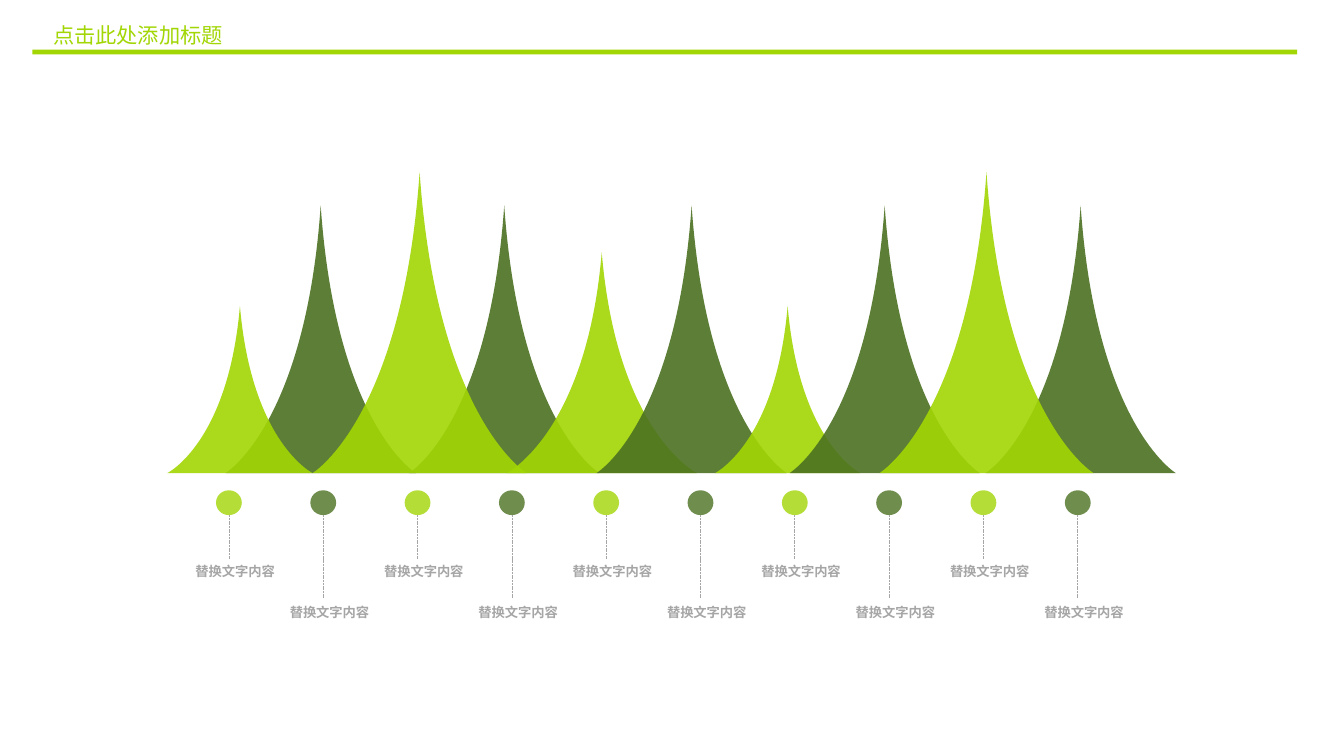
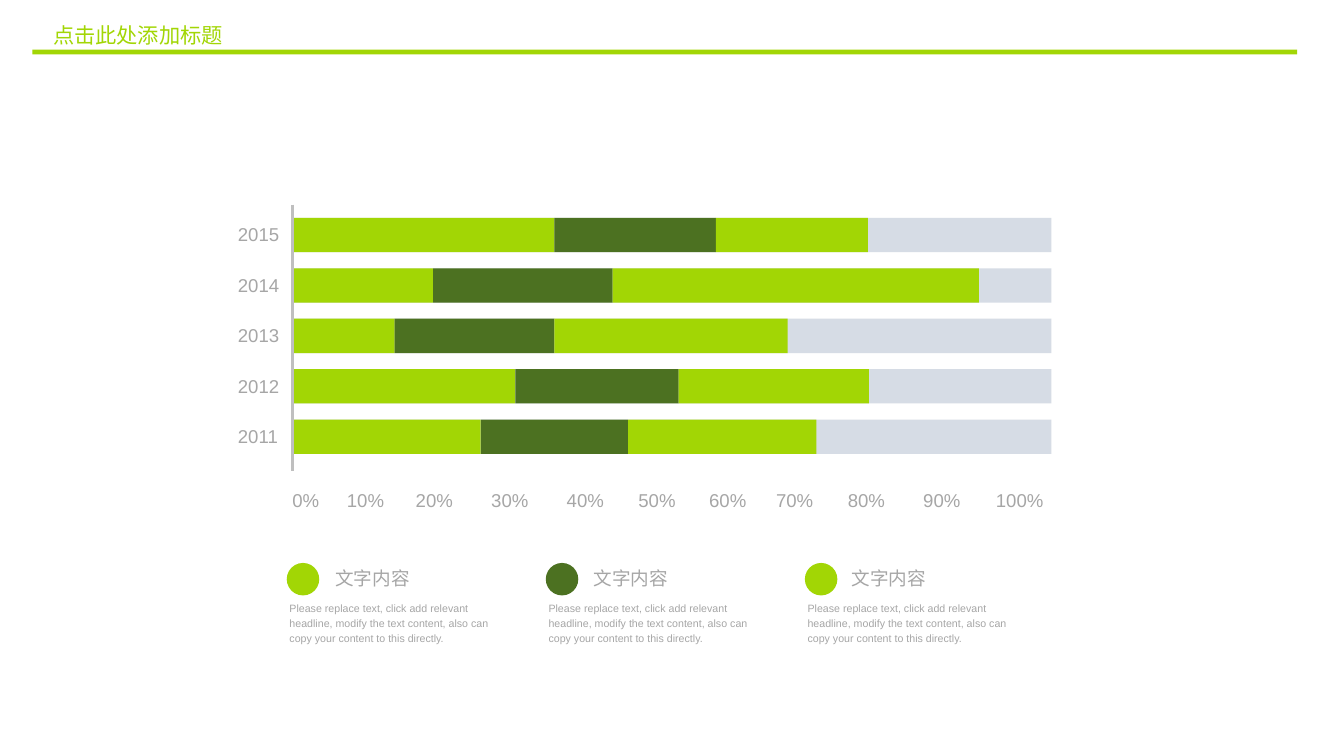
from dataclasses import dataclass

import lxml.etree
import pptx
import pptx.dml.color
import pptx.enum.dml
import pptx.enum.shapes
import pptx.enum.text
import pptx.oxml.ns
import pptx.slide
import pptx.util

qn = pptx.oxml.ns.qn
Inches = pptx.util.Inches
Shape = pptx.enum.shapes.MSO_SHAPE
Align = pptx.enum.text.PP_ALIGN


@dataclass(frozen=True)
class Theme:
    lime: str = "A2D605"
    forest: str = "4C7121"
    track: str = "D6DCE5"
    grey: str = "A6A6A6"
    spine: str = "BFBFBF"
    body_font: str = "Arial"
    title_font: str = "Noto Sans CJK SC"
    title_size: int = 16
    heading_size: int = 14
    label_size: int = 10
    note_size: int = 8


@dataclass(frozen=True)
class Hill:
    left: float
    width: float
    height: float
    color: str


@dataclass(frozen=True)
class YearRow:
    year: str
    widths: tuple


@dataclass(frozen=True)
class Box:
    left: float
    top: float
    width: float
    height: float

    def emu(self) -> tuple:
        return tuple(Inches(v) for v in (self.left, self.top, self.width, self.height))


THEME = Theme()
WIDTH, HEIGHT = 14.06, 7.91
TITLE = "点击此处添加标题"

# Hills, back to front, standing on one base line
BASE = 4.95
TALL, MIDDLE, SMALL, LOW = (2.24, 3.15), (1.99, 2.8), (1.99, 2.31), (1.52, 1.75)
HILLS = [
    Hill(2.36, *MIDDLE, THEME.forest),
    Hill(4.28, *MIDDLE, THEME.forest),
    Hill(1.75, *LOW, THEME.lime),
    Hill(3.27, *TALL, THEME.lime),
    Hill(5.30, *SMALL, THEME.lime),
    Hill(6.24, *MIDDLE, THEME.forest),
    Hill(7.48, *LOW, THEME.lime),
    Hill(8.26, *MIDDLE, THEME.forest),
    Hill(10.31, *MIDDLE, THEME.forest),
    Hill(9.20, *TALL, THEME.lime),
]

# Markers: ten equal columns, labels on two alternating rows
MARKERS = 10
MARKER_FIRST, MARKER_LAST = 2.26, 11.14
MARKER_TOP = 5.13
LABEL_ROWS = (5.86, 6.29)
LINE_ENDS = (5.85, 6.26)
LABEL = "替换文字内容"

# Year rows: segment widths, laid end to end over a full-width track
ROWS = [
    YearRow("2015", (2.74, 1.69, 1.59)),
    YearRow("2014", (1.47, 1.88, 3.83)),
    YearRow("2013", (1.07, 1.67, 2.44)),
    YearRow("2012", (2.33, 1.71, 1.99)),
    YearRow("2011", (1.97, 1.54, 1.97)),
]
SEGMENT_COLORS = (THEME.lime, THEME.forest, THEME.lime)
BAR_LEFT, BAR_TOP, BAR_WIDTH, BAR_HEIGHT = 3.06, 2.28, 7.94, 0.36
ROW_STEP = (4.39 - BAR_TOP) / (len(ROWS) - 1)
TICK_TOP = 5.02
TICK_LEFTS = (2.96, 3.53, 4.25, 5.04, 5.83, 6.58, 7.32, 8.02, 8.77, 9.56, 10.32)
TICK_WIDTHS = {2: 0.49, 3: 0.59, 4: 0.70}

# Legend columns
DOT_LEFT, HEADING_LEFT, NOTE_LEFT = 3.0, 3.41, 2.93
LEGEND_STEP, HEADING_STEP = 2.71, 2.7
HEADING = "文字内容"
NOTE = ("Please replace text, click add relevant headline, modify the text "
        "content, also can copy your content to this directly.")


def rgb(color: str) -> pptx.dml.color.RGBColor:
    return pptx.dml.color.RGBColor.from_string(color)


def paint(shape, color: str, opacity: int = 100) -> None:
    shape.shadow.inherit = False
    shape.line.fill.background()
    shape.fill.solid()
    shape.fill.fore_color.rgb = rgb(color)
    if opacity < 100:
        tint = shape.element.spPr.find(qn("a:solidFill"))[0]
        lxml.etree.SubElement(tint, qn("a:alpha"), val=str(opacity * 1000))


def add_block(page: pptx.slide.Slide, kind, box: Box, color: str, opacity: int = 100):
    shape = page.shapes.add_shape(kind, *box.emu())
    paint(shape, color, opacity)
    return shape


def add_text(page: pptx.slide.Slide, box: Box, text: str, size: int, *,
             color: str = THEME.grey, font: str = THEME.body_font, bold: bool = False,
             align=None, wrap: bool = False, spacing: float = 1.2,
             inset: bool = True) -> None:
    frame = page.shapes.add_textbox(*box.emu()).text_frame
    frame.word_wrap = wrap
    if not inset:
        frame.margin_left = frame.margin_right = 0
        frame.margin_top = frame.margin_bottom = 0
    para = frame.paragraphs[0]
    para.text = text
    para.alignment = align
    para.line_spacing = spacing
    para.font.name = font
    para.font.size = pptx.util.Pt(size)
    para.font.bold = bold
    para.font.color.rgb = rgb(color)


def add_line(page: pptx.slide.Slide, x: float, top: float, bottom: float,
             color: str, weight: float):
    line = page.shapes.add_connector(pptx.enum.shapes.MSO_CONNECTOR.STRAIGHT,
                                     Inches(x), Inches(top), Inches(x), Inches(bottom))
    line.line.color.rgb = rgb(color)
    line.line.width = pptx.util.Pt(weight)
    lxml.etree.SubElement(line.element.spPr, qn("a:effectLst"))
    return line


def add_title(page: pptx.slide.Slide) -> None:
    add_text(page, Box(0.46, 0.18, 2.07, 0.39), TITLE, THEME.title_size,
             color=THEME.lime, font=THEME.title_font, wrap=True, spacing=1.0)


def add_band(page: pptx.slide.Slide) -> None:
    """Move the title band to the layout, so every page shows it."""
    band = add_block(page, Shape.RECTANGLE, Box(0.34, 0.52, 13.23, 0.05), THEME.lime)
    page.slide_layout.shapes.element.append(band.element)


def add_hill(page: pptx.slide.Slide, hill: Hill) -> None:
    width, height = Inches(hill.width), Inches(hill.height)
    left, top = Inches(hill.left), Inches(BASE) - height
    right_foot, tip, left_foot = (1, 1), (0.5, 0), (0, 1)
    corners = [(left + int(x * width), top + int(y * height))
               for x, y in (right_foot, tip, left_foot, right_foot)]
    builder = page.shapes.build_freeform(*corners[0])
    builder.add_line_segments(corners[1:], close=True)
    shape = builder.convert_to_shape()

    # Bend both flanks into cubic curves
    flanks = ((right_foot, (0.58, 0.82), tip), ((0.42, 0.82), left_foot, left_foot))
    outline = shape.element.find(".//" + qn("a:path"))
    for straight, controls in zip(outline.findall(qn("a:lnTo")), flanks):
        curve = lxml.etree.Element(qn("a:cubicBezTo"))
        for x, y in controls:
            lxml.etree.SubElement(curve, qn("a:pt"), x=str(int(x * width)),
                                  y=str(int(y * height)))
        outline.replace(straight, curve)
    paint(shape, hill.color, 90)


def add_marker(page: pptx.slide.Slide, index: int) -> None:
    left = MARKER_FIRST + index * (MARKER_LAST - MARKER_FIRST) / (MARKERS - 1)
    row = index % 2
    color = (THEME.lime, THEME.forest)[row]
    dot = add_block(page, Shape.OVAL, Box(left, MARKER_TOP, 0.27, 0.26), color, 80)
    line = add_line(page, left + 0.135, MARKER_TOP + 0.26, LINE_ENDS[row], THEME.grey, 0.5)
    line.line.dash_style = pptx.enum.dml.MSO_LINE.SQUARE_DOT
    line.begin_connect(dot, 2)
    add_text(page, Box(left - 0.22, LABEL_ROWS[row], 0.84, 0.2), LABEL,
             THEME.label_size, bold=True, align=Align.CENTER, inset=False)


def add_ticks(page: pptx.slide.Slide) -> None:
    for index, left in enumerate(TICK_LEFTS):
        text = f"{index * 10}%"
        add_text(page, Box(left, TICK_TOP, TICK_WIDTHS[len(text)], 0.36), text,
                 THEME.heading_size, align=Align.JUSTIFY)


def add_year_row(page: pptx.slide.Slide, index: int, row: YearRow) -> None:
    top = BAR_TOP + index * ROW_STEP
    add_block(page, Shape.RECTANGLE, Box(BAR_LEFT, top, BAR_WIDTH, BAR_HEIGHT), THEME.track)
    left = BAR_LEFT
    for width, color in zip(row.widths, SEGMENT_COLORS):
        add_block(page, Shape.RECTANGLE, Box(left, top, width, BAR_HEIGHT), color)
        left += width
    add_text(page, Box(2.39, top - 0.04, 0.64, 0.36), row.year, THEME.heading_size,
             align=Align.JUSTIFY)


def add_legend(page: pptx.slide.Slide, index: int, color: str) -> None:
    shift = index * LEGEND_STEP
    add_block(page, Shape.OVAL, Box(DOT_LEFT + shift, 5.89, 0.34, 0.34), color)
    add_text(page, Box(HEADING_LEFT + index * HEADING_STEP, 5.84, 0.99, 0.36), HEADING,
             THEME.heading_size)
    add_text(page, Box(NOTE_LEFT + shift, 6.22, 2.46, 0.59), NOTE, THEME.note_size,
             wrap=True)


def main() -> None:
    deck = pptx.Presentation()
    deck.slide_width, deck.slide_height = Inches(WIDTH), Inches(HEIGHT)
    blank = deck.slide_layouts[6]

    # Hills with labelled markers
    page = deck.slides.add_slide(blank)
    add_band(page)
    for hill in HILLS:
        add_hill(page, hill)
    for index in range(MARKERS):
        add_marker(page, index)
    add_title(page)

    # Year rows with a scale and a legend
    page = deck.slides.add_slide(blank)
    add_ticks(page)
    for index, row in enumerate(ROWS):
        add_year_row(page, index, row)
    add_line(page, BAR_LEFT, 2.14, 4.93, THEME.spine, 2)
    for index, color in enumerate(SEGMENT_COLORS):
        add_legend(page, index, color)
    add_title(page)

    deck.save("out.pptx")


if __name__ == "__main__":
    main()
